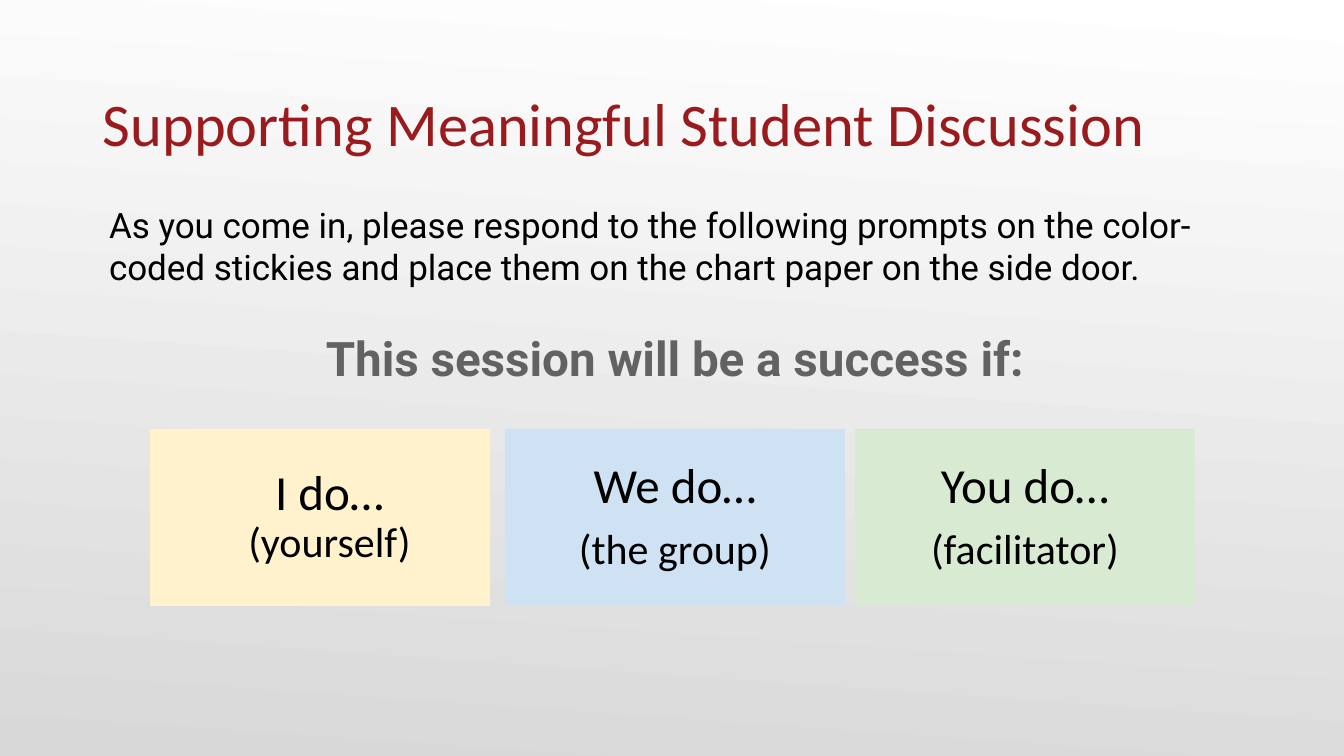
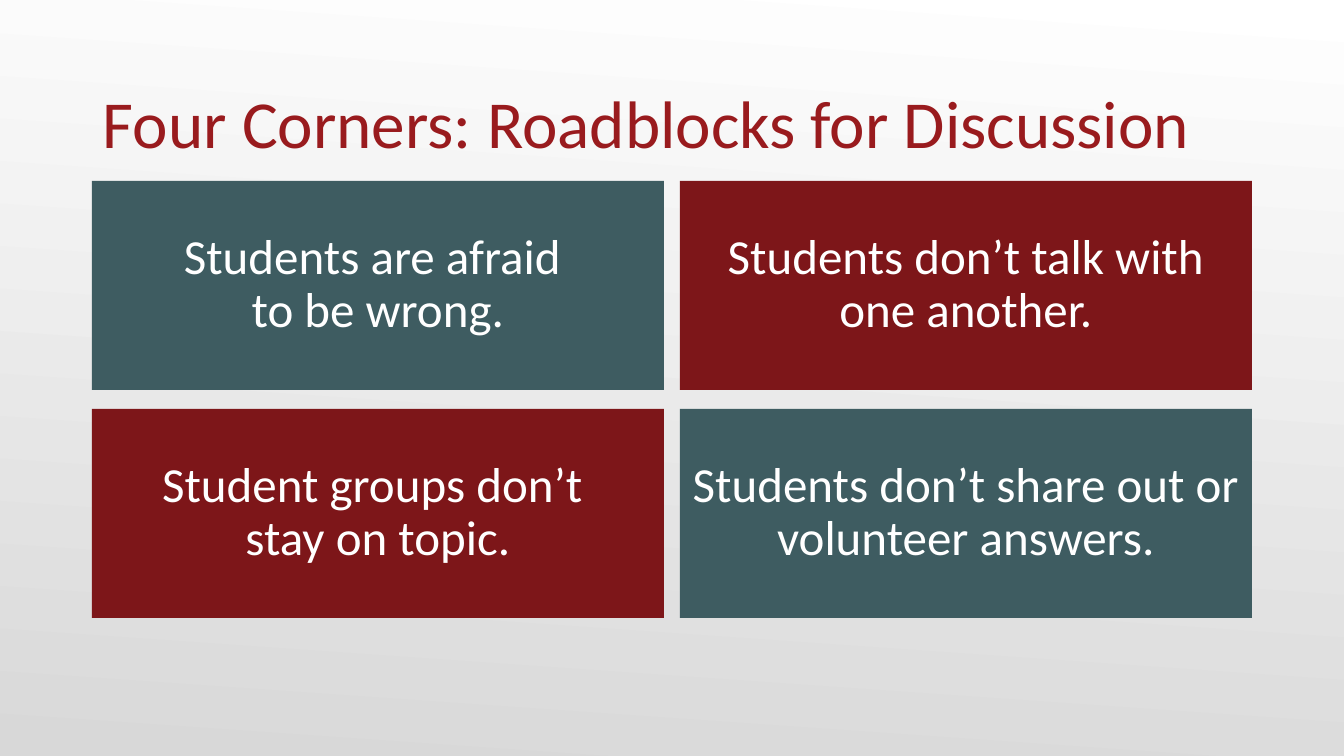
from pptx import Presentation
from pptx.dml.color import RGBColor
from pptx.enum.shapes import MSO_SHAPE
from pptx.enum.text import MSO_ANCHOR, MSO_AUTO_SIZE, PP_ALIGN
from pptx.util import Emu, Pt

SCALE = 12192000 / 1344


def px(n):
    return Emu(round(n * SCALE))


def tint(code):
    return RGBColor.from_string(code)


class Deck:
    wide, high = 1344, 756
    sans, body = "Calibri", "Roboto"
    black, white, grey = "000000", "FFFFFF", "626262"
    red, wine, teal = "991B1E", "7D1619", "3E5C61"
    shades = ("FFFFFF", "D8D8D8")

    def __init__(self):
        self.prs = Presentation()
        self.prs.slide_width = px(self.wide)
        self.prs.slide_height = px(self.high)
        self.slide = None
        fill = self.prs.slide_master.background.fill
        fill.gradient()
        fill.gradient_angle = 266
        for stop, code in zip(fill.gradient_stops, self.shades):
            stop.color.rgb = tint(code)

    def place(self, shape, x, y, w, h):
        shape.left, shape.top, shape.width, shape.height = map(px, (x, y, w, h))

    def frame(self, shape, anchor, side=10, edge=5):
        tf = shape.text_frame
        tf.word_wrap = True
        tf.auto_size = MSO_AUTO_SIZE.NONE
        tf.vertical_anchor = anchor
        tf.margin_left = tf.margin_right = px(side)
        tf.margin_top = tf.margin_bottom = px(edge)
        return tf

    def style(self, para, size, code, face=sans, align=PP_ALIGN.CENTER,
              line=0.9, gap=0, bold=False):
        para.alignment = align
        para.line_spacing = line
        para.space_before = Pt(gap)
        font = para.font
        font.name, font.size, font.bold = face, Pt(size), bold
        font.color.rgb = tint(code)

    def title(self, text, size):
        layout = self.prs.slide_layouts[5]
        self.slide = self.prs.slides.add_slide(layout)
        shape = self.slide.shapes.title
        self.place(shape, 93, 72, 1159, 110)
        tf = self.frame(shape, MSO_ANCHOR.MIDDLE)
        tf.text = text
        self.style(tf.paragraphs[0], size, self.red, align=PP_ALIGN.LEFT)

    def card(self, x, y, w, h, fill, text, code, sizes=(35,), gap=10, shift=0):
        shape = self.slide.shapes.add_shape(
            MSO_SHAPE.RECTANGLE, px(x), px(y), px(w), px(h))
        shape.shadow.inherit = False
        shape.fill.solid()
        shape.fill.fore_color.rgb = tint(fill)
        shape.line.fill.background()
        tf = self.frame(shape, MSO_ANCHOR.MIDDLE)
        tf.margin_left = px(10 + shift)
        tf.text = text
        for para, size in zip(tf.paragraphs, sizes):
            self.style(para, size, code, gap=gap)

    def prompt(self, x, y, w, h, text, lead):
        box = self.slide.shapes.add_textbox(px(x), px(y), px(w), px(h))
        tf = self.frame(box, MSO_ANCHOR.TOP, edge=10)
        tf.text = text
        self.style(tf.paragraphs[0], 25, self.black, self.body,
                   PP_ALIGN.LEFT, 1.0)
        para = tf.add_paragraph()
        para.text = lead
        self.style(para, 34, self.grey, self.body, line=1.0, gap=29, bold=True)


def opening(deck):
    deck.title("Supporting Meaningful Student Discussion", 43.2)
    cards = (
        (150, "FFF2CC", "I do…\n(yourself)", 0, 19),
        (505, "CFE2F3", "We do…\n(the group)", 10, 0),
        (855, "D9EAD3", "You do…\n(facilitator)", 10, 0),
    )
    for x, fill, text, gap, shift in cards:
        deck.card(x, 429, 340, 177, fill, text, deck.black, (35, 30), gap, shift)
    deck.prompt(
        99, 194, 1152, 206,
        "As you come in, please respond to the following prompts on the "
        "color-coded stickies and place them on the chart paper on the "
        "side door.",
        "This session will be a success if:")


def corners(deck):
    deck.title("Four Corners: Roadblocks for Discussion", 48)
    texts = (
        "Students are afraid \vto be wrong.",
        "Students don’t talk with one another.",
        "Student groups don’t \vstay on topic.",
        "Students don’t share out or volunteer answers.",
    )
    for i, text in enumerate(texts):
        row, col = divmod(i, 2)
        fill = (deck.teal, deck.wine)[(row + col) % 2]
        deck.card(92 + col * 588, 181 + row * 228, 572, 209,
                  fill, text, deck.white)


def main():
    deck = Deck()
    opening(deck)
    corners(deck)
    deck.prs.save("out.pptx")


if __name__ == "__main__":
    main()
